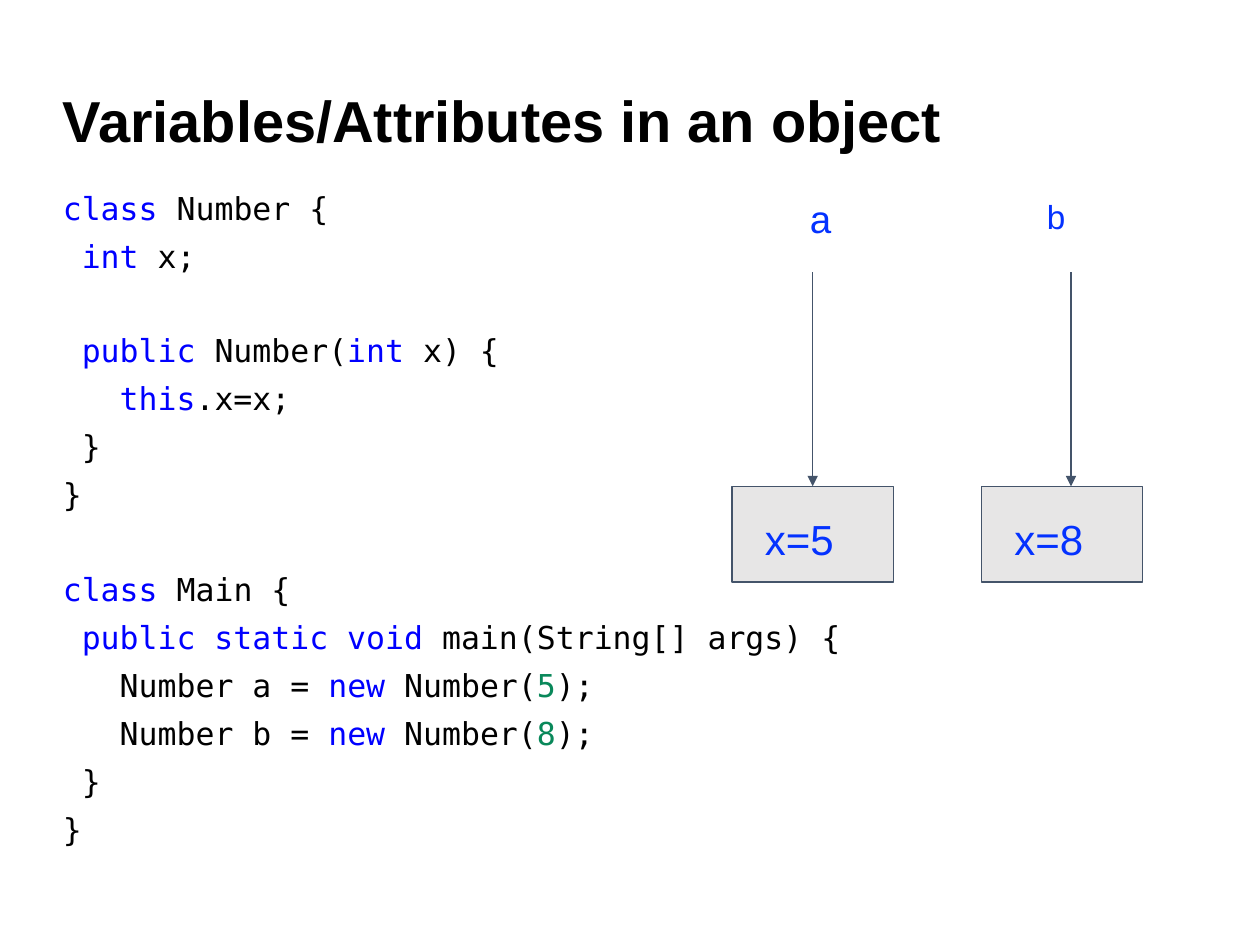
"""Build a slide that shows two Number objects beside the class that defines them."""
from dataclasses import dataclass

from lxml.etree import SubElement
from pptx import Presentation
from pptx.dml.color import RGBColor
from pptx.enum.shapes import MSO_CONNECTOR, MSO_SHAPE
from pptx.enum.text import MSO_ANCHOR, PP_ALIGN
from pptx.oxml.ns import qn
from pptx.util import Inches, Pt


@dataclass(frozen=True)
class Theme:
    black: RGBColor = RGBColor.from_string("000000")
    keyword: RGBColor = RGBColor.from_string("0000FF")
    number: RGBColor = RGBColor.from_string("09885A")
    value: RGBColor = RGBColor.from_string("0432FF")
    outline: RGBColor = RGBColor.from_string("44546A")
    box: RGBColor = RGBColor.from_string("E7E6E6")
    sans: str = "Arial"
    mono: str = "DejaVu Sans Mono"
    title_size: int = 33
    code_size: int = 18
    value_size: int = 24
    line_width: float = 0.75


theme = Theme()
presentation = Presentation()
presentation.slide_width, presentation.slide_height = Inches(10), Inches(7.5)
slide = presentation.slides.add_slide(presentation.slide_layouts[6])
column = presentation.slide_width / 100
row = presentation.slide_height / 75


def place(left, top, width, height):
    """Turn grid columns and rows into slide lengths."""
    return [round(length) for length in (left * column, top * row, width * column, height * row)]


def write(shape, text, *, size, color, font=theme.sans, bold=False, spacing=0.9,
          inset=(1, 1), anchor=MSO_ANCHOR.TOP):
    """Fill a shape with lines; parts between bars are highlighted, a blank line becomes a gap."""
    frame = shape.text_frame
    frame.word_wrap = True
    frame.vertical_anchor = anchor
    frame.margin_left = frame.margin_right = round(inset[0] * column)
    frame.margin_top = frame.margin_bottom = round(inset[1] * row)
    paragraph, gap = frame.paragraphs[0], 0
    for index, line in enumerate(text.split("\n")):
        if not line:
            gap = size * 1.164 * spacing
            continue
        if index:
            paragraph = frame.add_paragraph()
        paragraph.alignment = PP_ALIGN.LEFT
        paragraph.line_spacing = spacing
        if gap:
            paragraph.space_before, gap = Pt(round(gap, 1)), 0
        for position, part in enumerate(line.split("|")):
            if not part:
                continue
            run = paragraph.add_run()
            run.text = part
            run.font.name, run.font.size, run.font.bold = font, Pt(size), bold
            accent = theme.number if part.isdigit() else theme.keyword
            run.font.color.rgb = accent if position % 2 else color


code = """|class| Number {
 |int| x;

 |public| Number(|int| x) {
   |this|.x=x;
 }
}

|class| Main {
 |public| |static| |void| main(String[] args) {
   Number a = |new| Number(|5|);
   Number b = |new| Number(|8|);
 }
}"""

title = slide.shapes.add_textbox(*place(4, 5.6, 92.1, 8.4))
write(title, "Variables/Attributes in an object", size=theme.title_size, color=theme.black,
      bold=True, inset=(1, 0.5), anchor=MSO_ANCHOR.MIDDLE)
listing = slide.shapes.add_textbox(*place(4, 13.7, 92.1, 54.8))
write(listing, code, size=theme.code_size, color=theme.black, font=theme.mono,
      spacing=1.27, inset=(1, 0.5))

box_top, box_width, box_height = 38.6, 12.8, 7.6
objects = [
    ("a", 22, 63.3, 2.5, "x=5", 58.1, 64.5),
    ("b", 19, 82.1, 5, "x=8", 77.9, 85),
]
for name, name_size, name_left, name_width, value, box_left, arrow_x in objects:
    label = slide.shapes.add_textbox(*place(name_left, 14.9, name_width, 4.3))
    write(label, name, size=name_size, color=theme.value)

    box = slide.shapes.add_shape(MSO_SHAPE.RECTANGLE, *place(box_left, box_top, box_width, box_height))
    box.shadow.inherit = False
    box.fill.solid()
    box.fill.fore_color.rgb = theme.box
    box.line.color.rgb = theme.outline
    box.line.width = Pt(theme.line_width)
    write(box, value, size=theme.value_size, color=theme.value, inset=(2.6, 2.6))

    arrow = slide.shapes.add_connector(
        MSO_CONNECTOR.STRAIGHT, *place(arrow_x, 21.6, arrow_x, box_top))
    arrow.line.color.rgb = theme.outline
    arrow.line.width = Pt(theme.line_width)
    SubElement(arrow.line._get_or_add_ln(), qn("a:tailEnd"), type="triangle")
    SubElement(arrow._element.spPr, qn("a:effectLst"))
    if abs(arrow_x - box_left - box_width / 2) < 0.1:
        arrow.end_connect(box, 0)

presentation.save("out.pptx")
